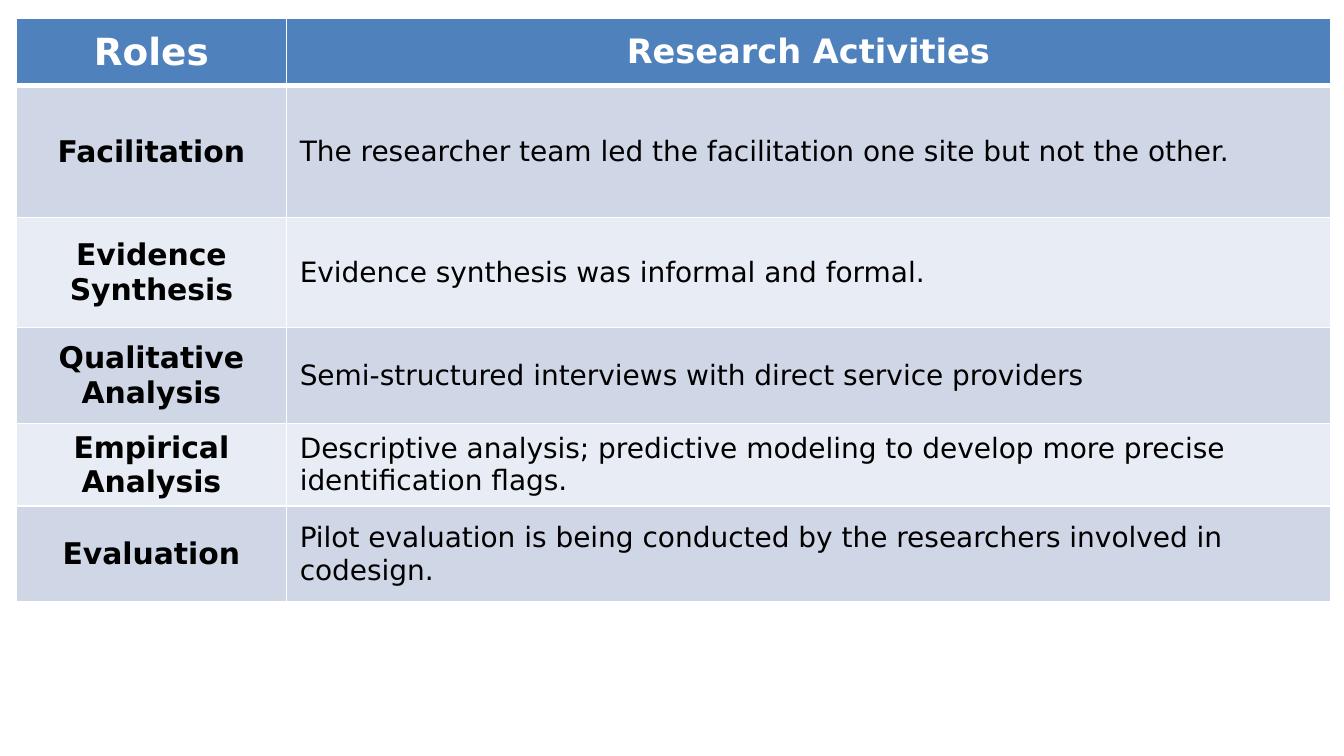
"""Build a one-slide table of researcher roles and their research activities."""
from dataclasses import dataclass

from lxml import etree
from pptx import Presentation
from pptx.dml.color import RGBColor
from pptx.enum import text
from pptx.oxml import ns
from pptx.util import Pt


@dataclass(frozen=True)
class Theme:
    font: str = "DejaVu Sans"
    header: str = "4F81BD"
    bands: tuple = ("CFD7E7", "E8ECF4")
    light: str = "FFFFFF"
    dark: str = "000000"
    role_heading: int = 20
    activity_heading: int = 18
    role: int = 16
    activity: int = 15
    thin: int = 1
    thick: int = 3


theme = Theme()


def write_cell(cell, words, *, size, color, fill, bold=False, centered=False, top=theme.thin, bottom=theme.thin):
    properties = cell._tc.get_or_add_tcPr()
    for side, width in (("L", theme.thin), ("R", theme.thin), ("T", top), ("B", bottom)):
        line = etree.SubElement(properties, ns.qn(f"a:ln{side}"), w=str(Pt(width)))
        paint = etree.SubElement(line, ns.qn("a:solidFill"))
        etree.SubElement(paint, ns.qn("a:srgbClr"), val=theme.light)
    cell.fill.solid()
    cell.fill.fore_color.rgb = RGBColor.from_string(fill)
    cell.vertical_anchor = text.MSO_ANCHOR.MIDDLE
    para = cell.text_frame.paragraphs[0]
    para.alignment = text.PP_ALIGN.CENTER if centered else text.PP_ALIGN.LEFT
    span = para.add_run()
    span.text = words
    span.font.name = theme.font
    span.font.size = Pt(size)
    span.font.bold = bold
    span.font.color.rgb = RGBColor.from_string(color)


activities = [
    ("Facilitation", "The researcher team led the facilitation one site but not the other."),
    ("Evidence Synthesis", "Evidence synthesis was informal and formal."),
    ("Qualitative Analysis", "Semi-structured interviews with direct service providers"),
    ("Empirical Analysis", "Descriptive analysis; predictive modeling to develop more precise identification flags."),
    ("Evaluation", "Pilot evaluation is being conducted by the researchers involved in codesign."),
]
column_widths = [144.5, 559.5]
row_heights = [36, 70.5, 59, 51.5, 36, 51.5]

deck = Presentation()
deck.slide_width, deck.slide_height = Pt(720), Pt(405)
page = deck.slides.add_slide(deck.slide_layouts[6])
table = page.shapes.add_table(
    len(row_heights), len(column_widths), Pt(8.9), Pt(10), Pt(sum(column_widths)), Pt(sum(row_heights))
).table
for column, width in zip(table.columns, column_widths):
    column.width = Pt(width)
for row, height in zip(table.rows, row_heights):
    row.height = Pt(height)

headings = [("Roles", theme.role_heading), ("Research Activities", theme.activity_heading)]
for index, (heading, size) in enumerate(headings):
    write_cell(table.cell(0, index), heading, size=size, color=theme.light, fill=theme.header,
               bold=True, centered=True, bottom=theme.thick)

for index, (role, activity) in enumerate(activities):
    band = theme.bands[index % 2]
    top = theme.thin if index else theme.thick
    write_cell(table.cell(index + 1, 0), role, size=theme.role, color=theme.dark, fill=band,
               bold=True, centered=True, top=top)
    write_cell(table.cell(index + 1, 1), activity, size=theme.activity, color=theme.dark, fill=band, top=top)

deck.save("out.pptx")
